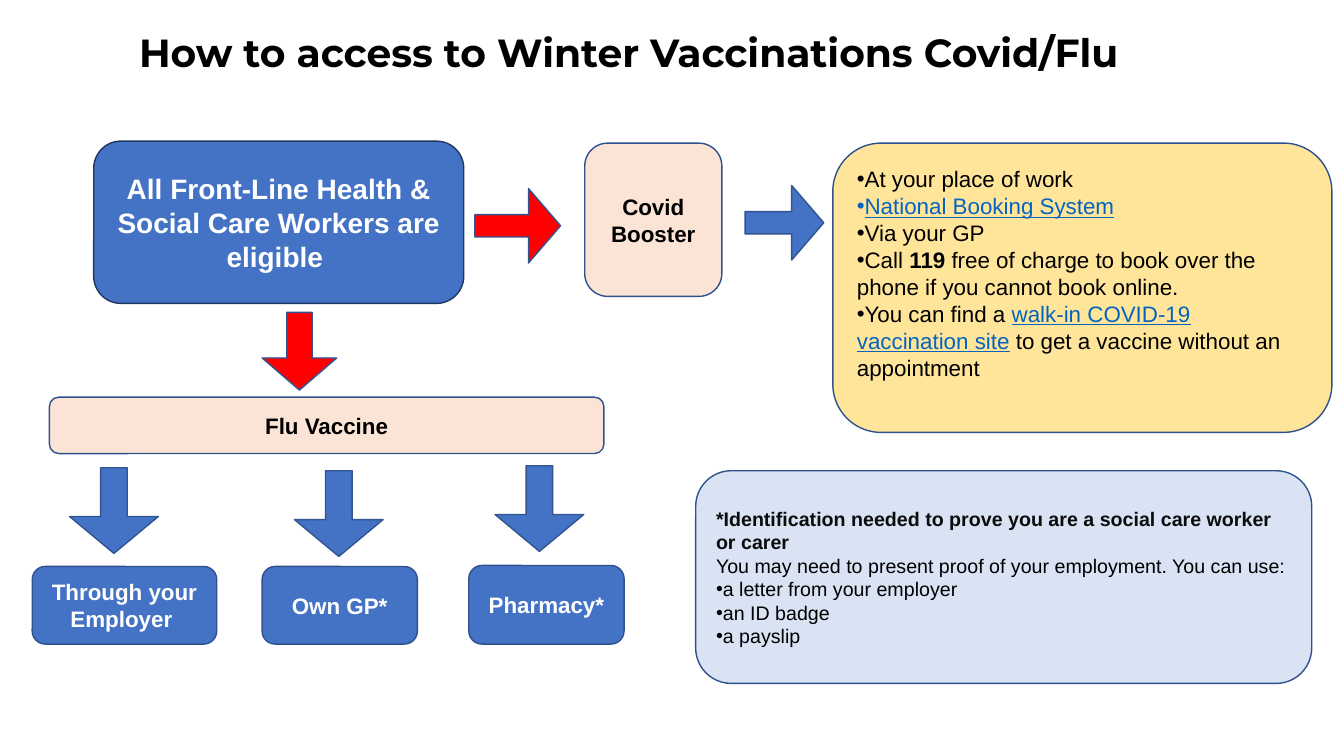
from lxml import etree
from pptx import Presentation
from pptx.dml.color import RGBColor
from pptx.enum.shapes import MSO_SHAPE
from pptx.enum.text import MSO_ANCHOR, PP_ALIGN
from pptx.oxml.ns import qn
from pptx.util import Inches, Pt

ROUNDED = MSO_SHAPE.ROUNDED_RECTANGLE
DOWN, RIGHT = MSO_SHAPE.DOWN_ARROW, MSO_SHAPE.RIGHT_ARROW
LEFT, CENTER = PP_ALIGN.LEFT, PP_ALIGN.CENTER
MIDDLE = MSO_ANCHOR.MIDDLE

COLORS = {
    "blue": "4472C4", "red": "FF0000", "peach": "FBE4D5", "yellow": "FFE599",
    "pale blue": "DAE3F3", "navy": "1F3763", "outline": "2F528F",
    "arrow outline": "325491", "white": "FFFFFF", "black": "000000",
    "ink": "0B0C0C", "link": "0563C1",
}


def add_filled_shape(kind, box, fill, outline, adjustments):
    shape = slide.shapes.add_shape(kind, *[Inches(length) for length in box])
    shape.shadow.inherit = False
    shape.fill.solid()
    shape.fill.fore_color.rgb = RGBColor.from_string(COLORS[fill])
    shape.line.color.rgb = RGBColor.from_string(COLORS[outline])
    shape.line.width = Pt(1)
    for index, value in enumerate(adjustments):
        shape.adjustments[index] = value
    return shape


def write_paragraph(paragraph, runs, size, align, bullet=False, font="Arial"):
    """Fill a paragraph with (text, color, bold) runs; link-coloured runs are underlined."""
    paragraph.alignment = align
    if bullet:
        properties = paragraph._p.get_or_add_pPr()
        etree.SubElement(properties, qn("a:buFont"), typeface="Arial")
        etree.SubElement(properties, qn("a:buChar"), char="•")
    for text, color, bold in runs:
        run = paragraph.add_run()
        run.text = text
        run.font.name = font
        run.font.size = Pt(size)
        run.font.bold = bold
        run.font.underline = color == "link"
        run.font.color.rgb = RGBColor.from_string(COLORS[color])


presentation = Presentation()
presentation.slide_width = Inches(13.33)
presentation.slide_height = Inches(7.5)
slide = presentation.slides.add_slide(presentation.slide_layouts[6])

# Title
title = slide.shapes.add_textbox(Inches(0.49), Inches(0.23), Inches(11.49), Inches(0.57))
title.text_frame.word_wrap = True
write_paragraph(title.text_frame.paragraphs[0],
                [("How to access to Winter Vaccinations Covid/Flu", "black", True)],
                28, CENTER, font="Montserrat")

# Flow boxes: text, box, fill, outline, text color, size
flow_boxes = [
    ("All Front-Line Health & Social Care Workers are eligible ",
     (0.93, 1.4, 3.67, 1.61), "blue", "navy", "white", 20),
    ("Covid Booster", (5.8, 1.42, 1.36, 1.52), "peach", "outline", "black", 16),
    ("Flu Vaccine", (0.49, 3.94, 5.5, 0.56), "peach", "outline", "black", 16),
    ("Through your Employer ", (0.32, 5.62, 1.83, 0.77), "blue", "outline", "white", 16),
    ("Own GP*", (2.6, 5.62, 1.54, 0.77), "blue", "outline", "white", 16),
    ("Pharmacy*", (4.65, 5.61, 1.54, 0.78), "blue", "outline", "white", 16),
]
for text, box, fill, outline, color, size in flow_boxes:
    shape = add_filled_shape(ROUNDED, box, fill, outline, [0.167])
    shape.text_frame.word_wrap = True
    shape.text_frame.vertical_anchor = MIDDLE
    write_paragraph(shape.text_frame.paragraphs[0], [(text, color, True)], size, CENTER)

# Detail panels: box, fill, size, bottom inset, paragraphs as (bullet, runs)
panels = [
    ((8.26, 1.42, 4.95, 2.87), "yellow", 16, 0.34, [
        (True, [("At your place of work", "black", False)]),
        (True, [("National Booking System", "link", False)]),
        (True, [("Via your GP", "black", False)]),
        (True, [("Call ", "black", False), ("119", "black", True),
                (" free of charge to book over the phone if you cannot book online.",
                 "black", False)]),
        (True, [("You can find a ", "black", False),
                ("walk-in COVID-19 vaccination site", "link", False),
                (" to get a vaccine without an appointment", "black", False)]),
    ]),
    ((6.9, 4.67, 6.11, 2.11), "pale blue", 14, 0.05, [
        (False, [("*Identification needed to prove you are a social care worker or carer",
                  "ink", True)]),
        (False, [("You may need to present proof of your employment. You can use:",
                  "black", False)]),
        (True, [("a letter from your employer", "black", False)]),
        (True, [("an ID badge", "black", False)]),
        (True, [("a payslip", "black", False)]),
    ]),
]
for box, fill, size, bottom_inset, paragraphs in panels:
    frame = add_filled_shape(ROUNDED, box, fill, "outline", [0.167]).text_frame
    frame.word_wrap = True
    frame.vertical_anchor = MIDDLE
    frame.margin_bottom = Inches(bottom_inset)
    for index, (bullet, runs) in enumerate(paragraphs):
        paragraph = frame.add_paragraph() if index else frame.paragraphs[0]
        write_paragraph(paragraph, runs, size, LEFT, bullet)

# Arrows: kind, box, fill, shaft share
arrows = [
    (RIGHT, (4.71, 1.87, 0.85, 0.74), "red", 0.3),
    (RIGHT, (7.39, 1.84, 0.78, 0.74), "blue", 0.3),
    (DOWN, (2.6, 3.1, 0.74, 0.77), "red", 0.34),
    (DOWN, (0.69, 4.64, 0.88, 0.85), "blue", 0.3),
    (DOWN, (2.92, 4.67, 0.88, 0.85), "blue", 0.3),
    (DOWN, (4.91, 4.62, 0.88, 0.85), "blue", 0.3),
]
for kind, box, fill, shaft in arrows:
    add_filled_shape(kind, box, fill, "arrow outline", [shaft, 0.43])

presentation.save("out.pptx")
